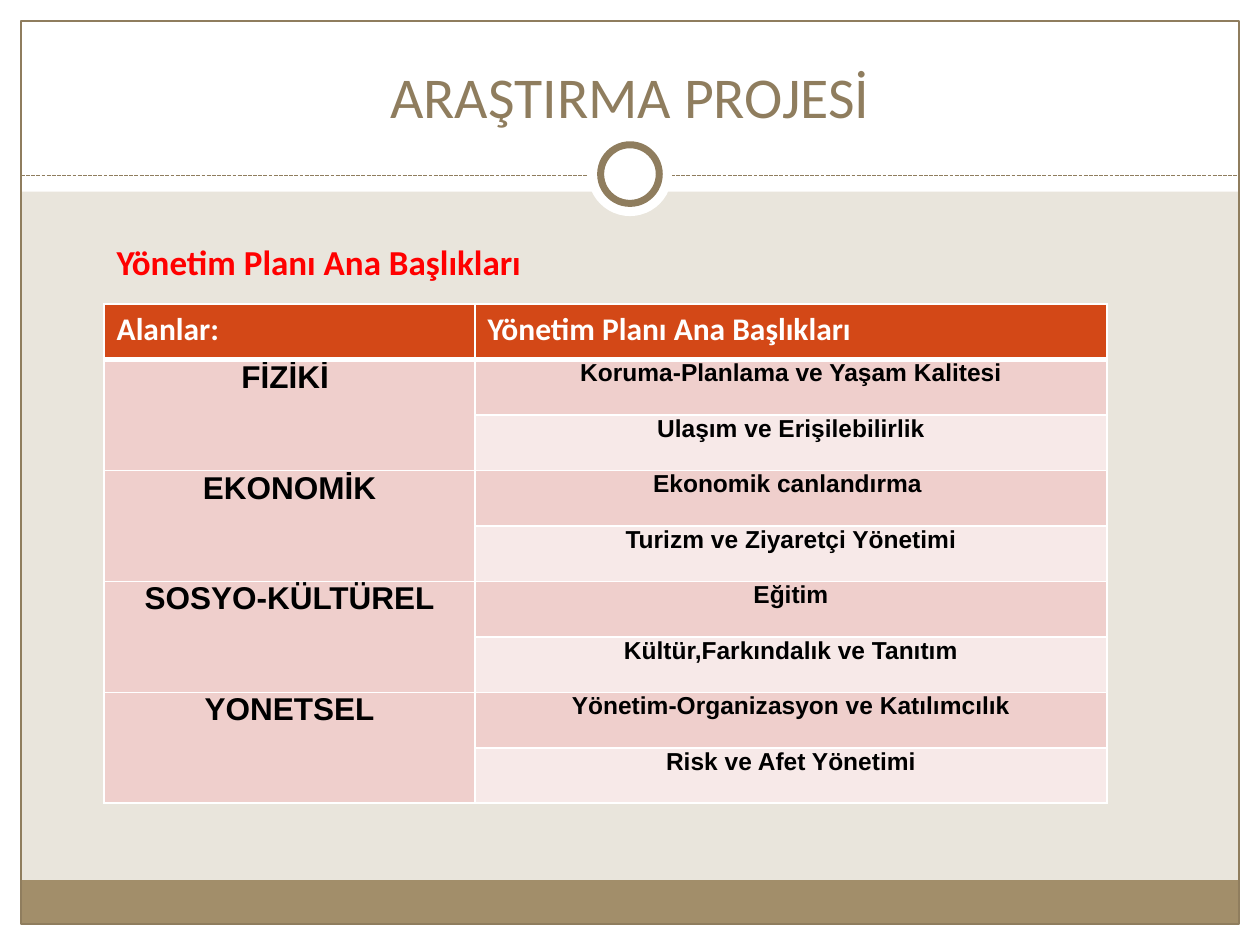
from lxml import etree
from pptx import Presentation
from pptx.dml.color import RGBColor
from pptx.enum import dml, shapes, text
from pptx.oxml import ns
from pptx.util import Pt

BROWN, WHITE, BLACK = "8F7D5E", "FFFFFF", "000000"
SHAPE, ALIGN = shapes.MSO_SHAPE, text.PP_ALIGN

AREAS = [
    ("FİZİKİ ", ["Koruma-Planlama ve Yaşam Kalitesi", "Ulaşım ve Erişilebilirlik"]),
    ("EKONOMİK", ["Ekonomik canlandırma ", "Turizm ve Ziyaretçi Yönetimi"]),
    ("SOSYO-KÜLTÜREL", ["Eğitim", "Kültür,Farkındalık ve Tanıtım"]),
    ("YONETSEL", ["Yönetim-Organizasyon ve Katılımcılık", "Risk ve Afet Yönetimi"]),
]


def rgb(value):
    return RGBColor.from_string(value)


class Deck:
    head_font, body_font = "Calibri", "Arial"

    def __init__(self, width, height, background):
        self.prs = Presentation()
        self.prs.slide_width, self.prs.slide_height = Pt(width), Pt(height)
        self.s = self.prs.slides.add_slide(self.prs.slide_layouts[5])
        fill = self.s.background.fill
        fill.solid()
        fill.fore_color.rgb = rgb(background)

    def set_text(self, tf, words, size, color, font, bold=False, align=ALIGN.LEFT):
        p = tf.paragraphs[0]
        p.text = words
        p.alignment = align
        p.font.size, p.font.bold, p.font.name = Pt(size), bold, font
        p.font.color.rgb = rgb(color)

    def shape(self, kind, box, fill=None, line=None, weight=0.75):
        sp = self.s.shapes.add_shape(kind, *map(Pt, box))
        sp.shadow.inherit = False
        if fill:
            sp.fill.solid()
            sp.fill.fore_color.rgb = rgb(fill)
        else:
            sp.fill.background()
        if line:
            sp.line.color.rgb = rgb(line)
            sp.line.width = Pt(weight)
        else:
            sp.line.fill.background()

    def dashed_line(self, *ends):
        line = self.s.shapes.add_connector(shapes.MSO_CONNECTOR.STRAIGHT, *map(Pt, ends))
        line.line.color.rgb = rgb(BROWN)
        line.line.width = Pt(0.75)
        line.line.dash_style = dml.MSO_LINE.SQUARE_DOT
        etree.SubElement(line._element.spPr, ns.qn("a:effectLst"))

    def title(self, words, box):
        sp = self.s.shapes.title
        sp.left, sp.top, sp.width, sp.height = map(Pt, box)
        tf = sp.text_frame
        tf.auto_size = text.MSO_AUTO_SIZE.NONE
        tf.vertical_anchor = text.MSO_ANCHOR.BOTTOM
        self.set_text(tf, words, 33, BROWN, self.head_font, align=ALIGN.CENTER)
        sp._element.getparent().append(sp._element)

    def label(self, words, box):
        tf = self.s.shapes.add_textbox(*map(Pt, box)).text_frame
        tf.word_wrap = True
        self.set_text(tf, words, 20, "FF0000", self.head_font, bold=True)

    def cell_style(self, cell, fill, top=1, bottom=1):
        tcPr = cell._tc.get_or_add_tcPr()
        for side, weight in zip("LRTB", (1, 1, top, bottom)):
            ln = etree.SubElement(tcPr, ns.qn(f"a:ln{side}"), w=str(Pt(weight)))
            solid = etree.SubElement(ln, ns.qn("a:solidFill"))
            etree.SubElement(solid, ns.qn("a:srgbClr"), val=WHITE)
        cell.fill.solid()
        cell.fill.fore_color.rgb = rgb(fill)

    def body_cell(self, cell, words, size):
        self.set_text(cell.text_frame, words, size, BLACK, self.body_font, True, ALIGN.CENTER)

    def table(self, left, top, widths, row_height, headings, areas):
        rows = 1 + sum(len(topics) for _, topics in areas)
        table = self.s.shapes.add_table(
            rows, len(widths), Pt(left), Pt(top), Pt(sum(widths)), Pt(row_height * rows)
        ).table
        for column, width in zip(table.columns, widths):
            column.width = Pt(width)
        for row in table.rows:
            row.height = Pt(row_height)
        for column, words in enumerate(headings):
            cell = table.cell(0, column)
            self.cell_style(cell, "D34817", bottom=3)
            self.set_text(cell.text_frame, words, 18, WHITE, self.head_font, bold=True)
        row = 1
        for area, topics in areas:
            first = table.cell(row, 0)
            first.merge(table.cell(row + len(topics) - 1, 0))
            self.body_cell(first, area, 18)
            for index, topic in enumerate(topics):
                fills = ("EFCFCC", "F7E9E8" if index % 2 else "EFCFCC")
                for column, fill in enumerate(fills):
                    cell = table.cell(row, column)
                    cell.margin_left = cell.margin_right = Pt(5)
                    cell.margin_top = cell.margin_bottom = 0
                    self.cell_style(cell, fill, top=3 if row == 1 else 1)
                self.body_cell(table.cell(row, 1), topic, 14)
                row += 1


def main():
    deck = Deck(720, 540, "E9E5DC")
    for box in [(0, 528, 720, 12), (0, 0, 720, 109.5), (0, 0, 12, 540), (708, 0, 12, 540)]:
        deck.shape(SHAPE.RECTANGLE, box, WHITE)
    deck.shape(SHAPE.RECTANGLE, (12, 503, 696, 25), "A28E6A")
    deck.shape(SHAPE.RECTANGLE, (12, 12, 696, 516), line=BROWN)
    deck.dashed_line(12, 100.5, 708, 100.5)
    deck.shape(SHAPE.OVAL, (336, 75.5, 48, 48), WHITE)
    deck.shape(SHAPE.OVAL, (343.25, 82.75, 33.5, 33.5), WHITE, BROWN, 4)
    deck.title("ARAŞTIRMA PROJESİ", (24, 18, 672, 60))
    heading = "Yönetim Planı Ana Başlıkları"
    deck.table(59.5, 173.75, (212, 361), 31.7, ("Alanlar:", heading), AREAS)
    deck.label(heading, (59.5, 134, 289.5, 31.5))
    deck.prs.save("out.pptx")


if __name__ == "__main__":
    main()
